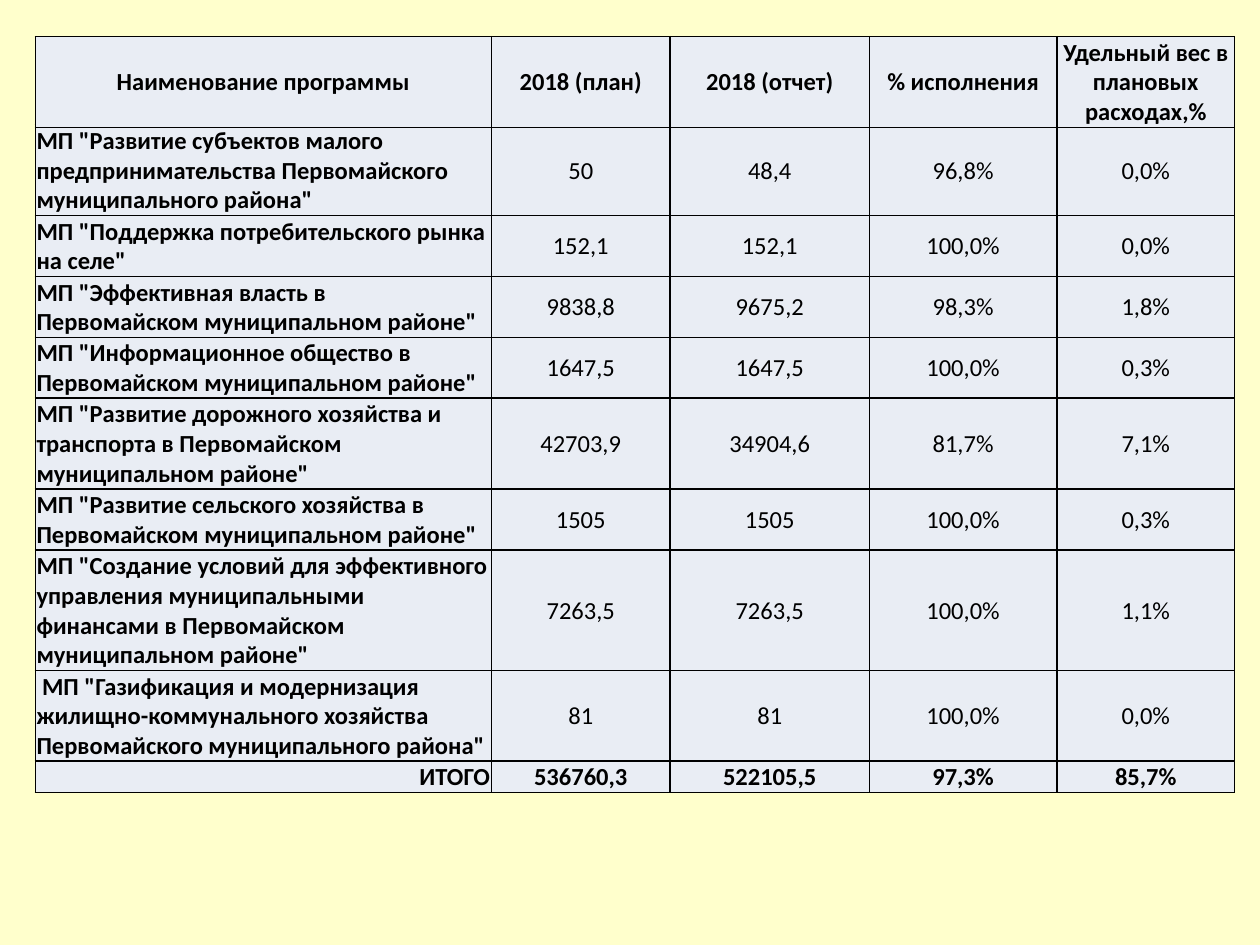
from lxml import etree
from pptx import Presentation
from pptx.dml.color import RGBColor
from pptx.enum.text import MSO_ANCHOR, PP_ALIGN
from pptx.oxml.ns import qn
from pptx.util import Pt

LEFT, MID, RIGHT = PP_ALIGN.LEFT, PP_ALIGN.CENTER, PP_ALIGN.RIGHT
CENTER, LOW = MSO_ANCHOR.MIDDLE, MSO_ANCHOR.BOTTOM
BLACK = RGBColor(0x00, 0x00, 0x00)
CREAM = RGBColor(0xFF, 0xFF, 0xCC)
PALE = RGBColor(0xE9, 0xED, 0xF4)

COLS = [260.64, 102.24, 113.76, 107.28, 101.52]
HEADS = ["Наименование программы", "2018 (план)", "2018 (отчет)",
         "% исполнения", "Удельный вес в плановых расходах,%"]
ROWS = [
    (51.12, 'МП "Развитие субъектов малого предпринимательства Первомайского муниципального района"',
     "50", "48,4", "96,8%", "0,0%"),
    (34.56, 'МП "Поддержка потребительского рынка на селе"',
     "152,1", "152,1", "100,0%", "0,0%"),
    (33.12, 'МП "Эффективная власть в Первомайском муниципальном районе"',
     "9838,8", "9675,2", "98,3%", "1,8%"),
    (16.56, 'МП "Информационное общество в Первомайском муниципальном районе"',
     "1647,5", "1647,5", "100,0%", "0,3%"),
    (51.12, 'МП "Развитие дорожного хозяйства и транспорта в Первомайском муниципальном районе"',
     "42703,9", "34904,6", "81,7%", "7,1%"),
    (10.08, 'МП "Развитие сельского хозяйства в Первомайском муниципальном районе"',
     "1505", "1505", "100,0%", "0,3%"),
    (33.12, 'МП "Создание условий для эффективного управления муниципальными финансами в Первомайском муниципальном районе"',
     "7263,5", "7263,5", "100,0%", "1,1%"),
    (38.88, ' МП "Газификация и модернизация жилищно-коммунального хозяйства Первомайского муниципального района"',
     "81", "81", "100,0%", "0,0%"),
    (17.28, "ИТОГО", "536760,3", "522105,5", "97,3%", "85,7%"),
]


def write(frame, text, font="Calibri", size=14, color=BLACK, bold=False, align=MID):
    para = frame.paragraphs[0]
    para.alignment = align
    run = para.add_run()
    run.text = text
    run.font.name = font
    run.font.size = Pt(size)
    run.font.bold = bold
    run.font.color.rgb = color


class Board:
    def __init__(self, slide, fill=PALE, line=BLACK, width=1):
        self.slide = slide
        self.fill = fill
        self.line = line
        self.width = width

    def back(self, color):
        fill = self.slide.background.fill
        fill.solid()
        fill.fore_color.rgb = color

    def edge(self, cell):
        props = cell._tc.get_or_add_tcPr()
        for side in ("lnL", "lnR", "lnT", "lnB"):
            line = etree.SubElement(props, qn("a:" + side), w=str(Pt(self.width)))
            solid = etree.SubElement(line, qn("a:solidFill"))
            etree.SubElement(solid, qn("a:srgbClr"), val=str(self.line))

    def cell(self, cell, text, anchor=CENTER, **style):
        self.edge(cell)
        cell.fill.solid()
        cell.fill.fore_color.rgb = self.fill
        cell.margin_left = cell.margin_right = cell.margin_top = Pt(0.72)
        cell.margin_bottom = Pt(0)
        cell.vertical_anchor = anchor
        write(cell.text_frame, text, **style)

    def table(self, left, top, width, height, cols, rows):
        shape = self.slide.shapes.add_table(
            len(rows), len(cols), Pt(left), Pt(top), Pt(width), Pt(height))
        table = shape.table
        table.first_row = table.horz_banding = False
        for col, size in zip(table.columns, cols):
            col.width = Pt(size)
        for row, size in zip(table.rows, rows):
            row.height = Pt(size)
        shape.width, shape.height = Pt(width), Pt(height)
        return table


def main():
    deck = Presentation()
    deck.slide_width, deck.slide_height = Pt(720), Pt(540)
    board = Board(deck.slides.add_slide(deck.slide_layouts[6]))
    board.back(CREAM)

    body = board.table(20.16, 71.28, 686.16, 375.12, COLS, [row[0] for row in ROWS])
    for i, (_, name, *vals) in enumerate(ROWS):
        total = i == len(ROWS) - 1
        board.cell(body.cell(i, 0), name, anchor=LOW, bold=True,
                   align=RIGHT if total else LEFT)
        for j, val in enumerate(vals, 1):
            board.cell(body.cell(i, j), val, bold=total)

    head = board.table(20.16, 20.88, 686.16, 51.12, COLS, [43.2])
    for j, name in enumerate(HEADS):
        last = j == len(HEADS) - 1
        board.cell(head.cell(0, j), name, anchor=LOW if last else CENTER, bold=True)

    deck.save("out.pptx")


if __name__ == "__main__":
    main()
